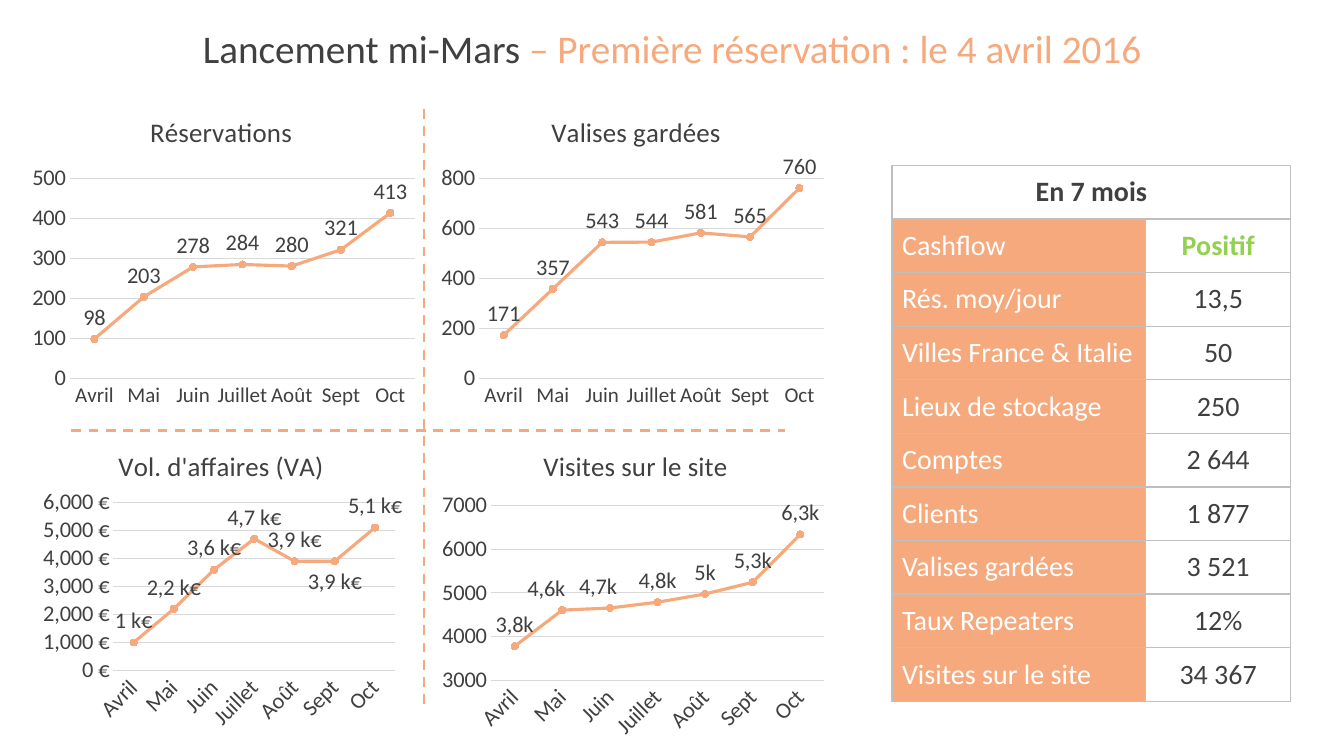
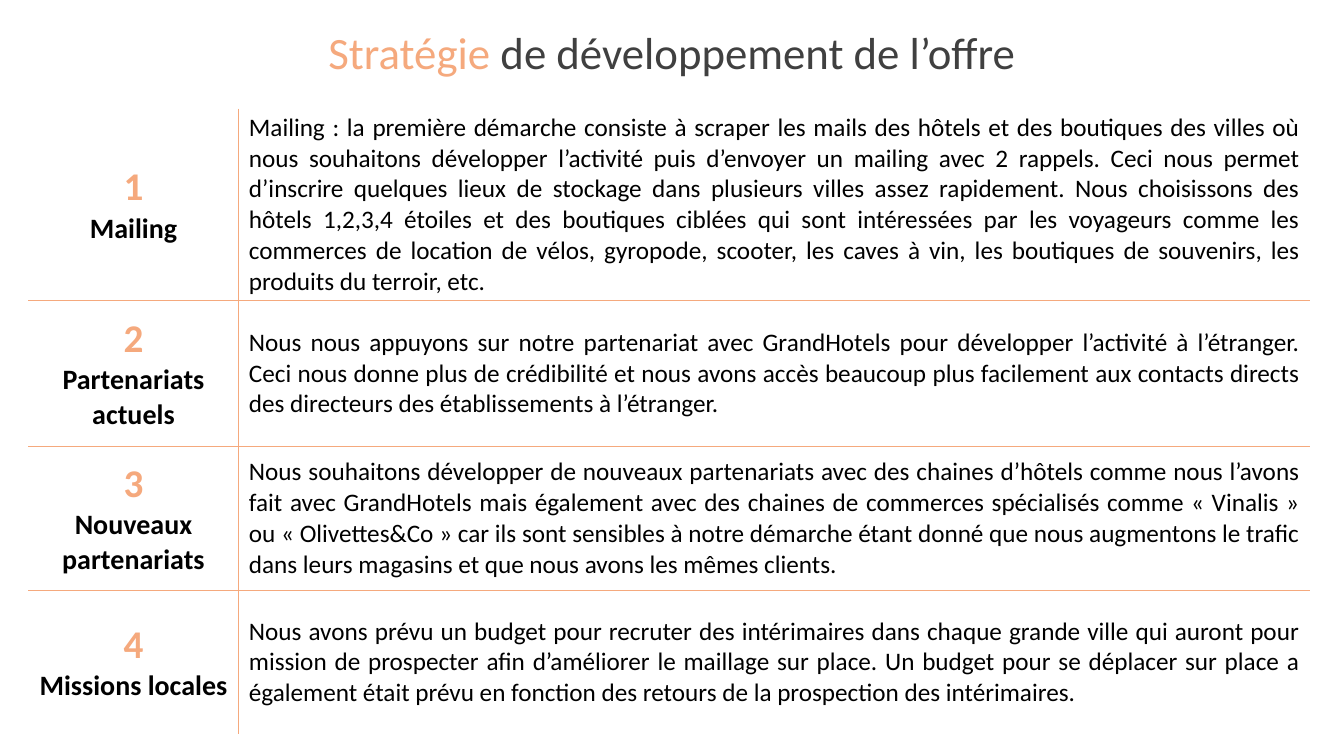
"""Build two slides: launch figures with charts, and the growth strategy."""
from lxml import etree
from pptx import Presentation
from pptx.chart.data import CategoryChartData
from pptx.dml.color import RGBColor
from pptx.enum.chart import XL_CHART_TYPE, XL_LABEL_POSITION, XL_MARKER_STYLE, XL_TICK_MARK
from pptx.enum.dml import MSO_LINE
from pptx.enum.shapes import MSO_CONNECTOR
from pptx.enum.text import MSO_ANCHOR, PP_ALIGN
from pptx.oxml import parse_xml
from pptx.oxml.ns import nsdecls, qn
from pptx.util import Cm, Pt

LINE = XL_CHART_TYPE.LINE_MARKERS
ABOVE = XL_LABEL_POSITION.ABOVE
BELOW = XL_LABEL_POSITION.BELOW
DOT = XL_MARKER_STYLE.CIRCLE
NO_TICK = XL_TICK_MARK.NONE
DASH = MSO_LINE.DASH
STRAIGHT = MSO_CONNECTOR.STRAIGHT
MIDDLE = MSO_ANCHOR.MIDDLE
LEFT, CENTER, JUSTIFY = PP_ALIGN.LEFT, PP_ALIGN.CENTER, PP_ALIGN.JUSTIFY

PEACH, DARK, GREY, PALE = "F5A97D", "404040", "BFBFBF", "D9D9D9"
WHITE, BLACK, GREEN = "FFFFFF", "000000", "92D050"
FONT = "Calibri"
PLAIN = "{2D5ABB26-0587-4C30-8999-92F81FD0307C}"
LAYOUT = "<c:layout %s><c:manualLayout>%s</c:manualLayout></c:layout>"


def hue(code):
    return RGBColor.from_string(code)


def write(para, text, size, color, bold=False, align=CENTER):
    para.alignment = align
    run = para.add_run()
    run.text = text
    look = {"name": FONT, "size": Pt(size), "bold": bold}
    for key, value in look.items():
        setattr(run.font, key, value)
    run.font.color.rgb = hue(color)


deck = Presentation()
deck.slide_width, deck.slide_height = Cm(33.87), Cm(19.05)

titles = [
    (28, 1.45, [("Lancement mi-Mars ", DARK), ("– Première réservation : le 4 avril 2016", PEACH)]),
    (32, 1.63, [("Stratégie ", PEACH), ("de développement de l’offre", DARK)]),
]
slides = []
for size, height, parts in titles:
    slide = deck.slides.add_slide(deck.slide_layouts[5])
    head = slide.shapes.title
    box = {"left": 0, "top": Cm(0.48), "width": deck.slide_width, "height": Cm(height)}
    for key, value in box.items():
        setattr(head, key, value)
    for text, color in parts:
        write(head.text_frame.paragraphs[0], text, size, color)
    slides.append(slide)
launch, plan = slides
edges = []

facts = [
    ("Cashflow", "Positif"),
    ("Rés. moy/jour", "13,5"),
    ("Villes France & Italie", "50"),
    ("Lieux de stockage", "250"),
    ("Comptes", "2 644"),
    ("Clients", "1 877"),
    ("Valises gardées", "3 521"),
    ("Taux Repeaters", "12%"),
    ("Visites sur le site", "34 367"),
]
count = len(facts) + 1
grid = launch.shapes.add_table(count, 2, Cm(22.48), Cm(4.17), Cm(10.05), Cm(1.35 * count))
table = grid.table
table.columns[0].width, table.columns[1].width = Cm(6.39), Cm(3.66)
table.cell(0, 0).merge(table.cell(0, 1))
write(table.cell(0, 0).text_frame.paragraphs[0], "En 7 mois", 20, DARK, True)
for row, (name, value) in enumerate(facts, 1):
    good = value == "Positif"
    write(table.cell(row, 0).text_frame.paragraphs[0], name, 20, WHITE, align=LEFT)
    write(table.cell(row, 1).text_frame.paragraphs[0], value, 20, GREEN if good else DARK, good)
for row in range(count):
    for col in range(2):
        cell = table.cell(row, col)
        cell.vertical_anchor = MIDDLE
        if row and not col:
            cell.fill.solid()
            cell.fill.fore_color.rgb = hue(PEACH)
        else:
            cell.fill.background()
        edges.append((cell, "LRTB", GREY))

months = ["Avril", "Mai", "Juin", "Juillet", "Août", "Sept", "Oct"]
charts = [
    {"title": "Réservations", "start": 0.31, "scale": (0, 500, 100),
     "values": [98, 203, 278, 284, 280, 321, 413],
     "plot": (0.12, 0.26, 0.87, 0.63), "size": 15},
    {"title": "Valises gardées", "start": 0.28, "scale": (0, 800, 200),
     "values": [171, 357, 543, 544, 581, 565, 760],
     "plot": (0.11, 0.26, 0.87, 0.63), "size": 15},
    {"title": "Vol. d'affaires (VA)", "start": 0.23, "scale": (0, 6000, 1000), "turn": -45,
     "values": [1000, 2200, 3600, 4700, 3900, 3900, 5100],
     "plot": (0.23, 0.23, 0.71, 0.53), "format": '#,##0\\ "€"', "below": [5],
     "labels": ["1 k€", "2,2 k€", "3,6 k€", "4,7 k€", "3,9 k€", "3,9 k€", "5,1 k€"]},
    {"title": "Visites sur le site", "start": 0.26, "scale": (3000, 7000, 1000), "turn": -45,
     "values": [3774, 4603, 4651, 4784, 4972, 5242, 6338],
     "plot": (0.14, 0.24, 0.84, 0.55), "shift": {1: -0.04, 2: -0.03},
     "labels": ["3,8k", "4,6k", "4,7k", "4,8k", "5k", "5,3k", "6,3k"]},
]
for index, item in enumerate(charts):
    row, col = divmod(index, 2)
    data = CategoryChartData()
    data.categories = months
    data.add_series(item["title"], item["values"])
    left, top = Cm(0.56 + 10.41 * col), Cm(2.41 + 8.41 * row)
    chart = launch.shapes.add_chart(LINE, left, top, Cm(10), Cm(8), data).chart
    chart.has_legend = False
    chart.font.name, chart.font.size = FONT, Pt(16)
    chart.font.color.rgb = hue(DARK)

    chart.has_title = True
    write(chart.chart_title.text_frame.paragraphs[0], item["title"], 19.2, DARK)
    chart.chart_title.include_in_layout = False
    spot = '<c:xMode val="edge"/><c:yMode val="edge"/><c:x val="%s"/><c:y val="0.04"/>' % item["start"]
    for old in chart.element.xpath(".//c:title/c:layout"):
        old.getparent().remove(old)
    chart.element.xpath(".//c:title/c:tx")[0].addnext(parse_xml(LAYOUT % (nsdecls("c"), spot)))

    area = '<c:layoutTarget val="inner"/><c:xMode val="edge"/><c:yMode val="edge"/>'
    area += "".join('<c:%s val="%s"/>' % pair for pair in zip("xywh", item["plot"]))
    field = chart.element.xpath(".//c:plotArea")[0]
    for old in field.xpath("c:layout"):
        field.remove(old)
    field.insert(0, parse_xml(LAYOUT % (nsdecls("c"), area)))

    base, side = chart.category_axis, chart.value_axis
    for axis, size in ((base, item.get("size", 16)), (side, 16)):
        axis.major_tick_mark = axis.minor_tick_mark = NO_TICK
        axis.tick_labels.font.size = Pt(size)
        axis.tick_labels.font.name = FONT
        axis.tick_labels.font.color.rgb = hue(DARK)
    side.minimum_scale, side.maximum_scale, side.major_unit = item["scale"]
    side.tick_labels.number_format = item.get("format", "General")
    side.tick_labels.number_format_is_linked = False
    side.format.line.fill.background()
    for rule in (base.format.line, side.major_gridlines.format.line):
        rule.width = Pt(0.75)
        rule.color.rgb = hue(PALE)
    if "turn" in item:
        body = chart.element.xpath(".//c:catAx/c:txPr/a:bodyPr")[0]
        body.set("rot", str(item["turn"] * 60000))

    plot = chart.plots[0]
    plot.vary_by_categories = False
    curve = plot.series[0]
    curve.smooth = False
    curve.format.line.width = Pt(2.25)
    curve.format.line.color.rgb = hue(PEACH)
    curve.marker.style, curve.marker.size = DOT, 5
    curve.marker.format.fill.solid()
    curve.marker.format.fill.fore_color.rgb = hue(PEACH)
    curve.marker.format.line.color.rgb = hue(PEACH)
    tags = curve.data_labels
    tags.show_value, tags.position = True, ABOVE
    tags.font.name, tags.font.size = FONT, Pt(16)
    tags.font.color.rgb = hue(DARK)
    for spot, text in enumerate(item.get("labels", [])):
        tag = curve.points[spot].data_label
        write(tag.text_frame.paragraphs[0], text, 16, DARK)
        tag.position = BELOW if spot in item.get("below", []) else ABOVE
    for spot, shift in item.get("shift", {}).items():
        mark = chart.element.xpath('.//c:dLbl/c:idx[@val="%d"]' % spot)[0]
        move = '<c:x val="%s"/><c:y val="0"/>' % shift
        mark.addnext(parse_xml(LAYOUT % (nsdecls("c"), move)))

for ends in [(10.69, 2.74, 10.69, 17.75), (1.8, 10.85, 19.79, 10.85)]:
    rule = launch.shapes.add_connector(STRAIGHT, *map(Cm, ends))
    rule.line.width, rule.line.dash_style = Pt(1.75), DASH
    rule.line.color.rgb = hue(PEACH)
    etree.SubElement(rule.element.spPr, qn("a:effectLst"))

steps = [
    ("Mailing", 4.83,
     "Mailing : la première démarche consiste à scraper les mails des hôtels et des boutiques "
     "des villes où nous souhaitons développer l’activité puis d’envoyer un mailing avec 2 rappels. "
     "Ceci nous permet d’inscrire quelques lieux de stockage dans plusieurs villes assez rapidement. "
     "Nous choisissons des hôtels 1,2,3,4 étoiles et des boutiques ciblées qui sont intéressées par "
     "les voyageurs comme les commerces de location de vélos, gyropode, scooter, les caves à vin, "
     "les boutiques de souvenirs, les produits du terroir, etc."),
    ("Partenariats actuels", 3.68,
     "Nous nous appuyons sur notre partenariat avec GrandHotels pour développer l’activité à "
     "l’étranger. Ceci nous donne plus de crédibilité et nous avons accès beaucoup plus facilement "
     "aux contacts directs des directeurs des établissements à l’étranger."),
    ("Nouveaux partenariats", 3.63,
     "Nous souhaitons développer de nouveaux partenariats avec des chaines d’hôtels comme nous "
     "l’avons fait avec GrandHotels mais également avec des chaines de commerces spécialisés comme "
     "« Vinalis » ou « Olivettes&Co » car ils sont sensibles à notre démarche étant donné que nous "
     "augmentons le trafic dans leurs magasins et que nous avons les mêmes clients."),
    ("Missions locales", 3.61,
     "Nous avons prévu un budget pour recruter des intérimaires dans chaque grande ville qui auront "
     "pour mission de prospecter afin d’améliorer le maillage sur place. Un budget pour se déplacer "
     "sur place a également était prévu en fonction des retours de la prospection des intérimaires."),
]
tall = sum(step[1] for step in steps)
board = plan.shapes.add_table(len(steps), 2, Cm(0.71), Cm(2.74), Cm(32.31), Cm(tall))
table = board.table
table.columns[0].width, table.columns[1].width = Cm(5.31), Cm(27)
for row, (name, height, text) in enumerate(steps):
    table.rows[row].height = Cm(height)
    label, body = table.cell(row, 0), table.cell(row, 1)
    write(label.text_frame.paragraphs[0], str(row + 1), 28, PEACH, True)
    write(label.text_frame.add_paragraph(), name, 20, BLACK, True)
    write(body.text_frame.paragraphs[0], text, 18, BLACK, align=JUSTIFY)
    across = ("T" if row else "") + ("B" if row < len(steps) - 1 else "")
    for cell, inner in ((label, "R"), (body, "L")):
        cell.vertical_anchor = MIDDLE
        cell.margin_top = cell.margin_bottom = Cm(0.08)
        cell.fill.background()
        edges.append((cell, inner + across, PEACH))

for frame in (grid, board):
    frame.table.first_row = frame.table.horz_banding = False
    frame.element.xpath(".//a:tableStyleId")[0].text = PLAIN

for cell, sides, color in edges:
    props = cell._tc.get_or_add_tcPr()
    for place, side in enumerate(sides):
        props.insert(place, parse_xml(
            '<a:ln%s %s w="12700"><a:solidFill><a:srgbClr val="%s"/></a:solidFill></a:ln%s>'
            % (side, nsdecls("a"), color, side)))

deck.save("out.pptx")
